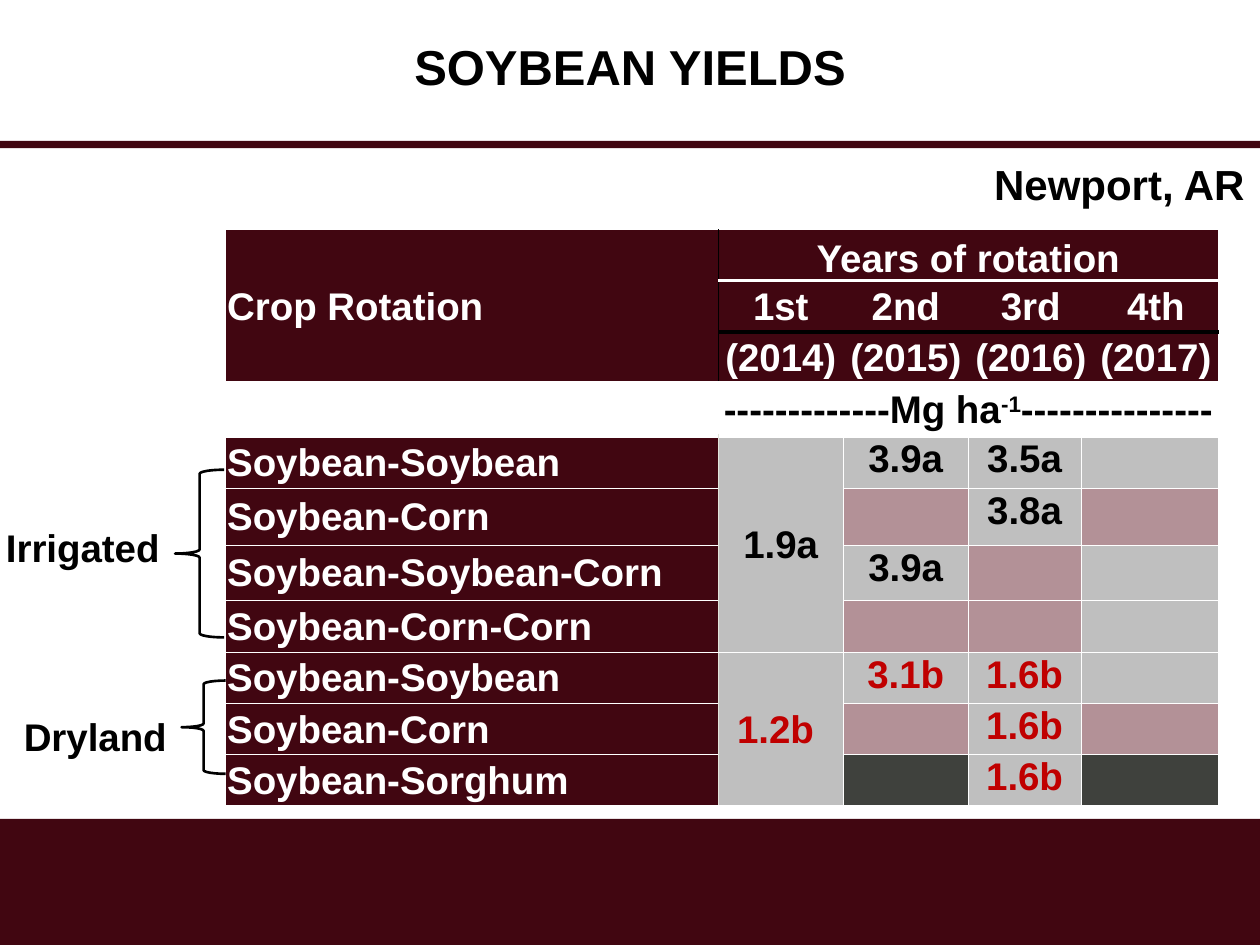
from dataclasses import dataclass
from typing import Optional

import pptx
import pptx.dml.color
import pptx.enum.shapes
import pptx.enum.text
import pptx.oxml
import pptx.oxml.ns
import pptx.util
from pptx.dml.color import RGBColor
from pptx.util import Cm

MAROON = RGBColor(0x41, 0x06, 0x11)
WHITE = RGBColor(0xFF, 0xFF, 0xFF)
BLACK = RGBColor(0, 0, 0)
RED = RGBColor(0xC0, 0, 0)
GRAY = RGBColor(0xBF, 0xBF, 0xBF)
ROSE = RGBColor(0xB3, 0x91, 0x97)
CHARCOAL = RGBColor(0x3F, 0x41, 0x3D)
PALE = RGBColor(0xE2, 0xE4, 0xDB)

ANCHOR = pptx.enum.text.MSO_ANCHOR
ALIGN = pptx.enum.text.PP_ALIGN
SHAPE = pptx.enum.shapes.MSO_SHAPE

COLUMN_WIDTHS = (9.93, 2.52, 2.52, 2.27, 0.25, 2.52)
ROW_HEIGHTS = (1.03, 1.03, 1.03, 1.07, 1.05, 1.15, 1.11, 1.05, 1.03, 1.03, 1.03)
HEADER_ROWS = 3
FIRST_CROP_ROW = 4
LAST_ROW = len(ROW_HEIGHTS) - 1
LAST_COLUMN = len(COLUMN_WIDTHS) - 1
NO_STYLE = "{2D5ABB26-0587-4C30-8999-92F81FD0307C}"


@dataclass
class Entry:
    row: int
    column: int
    texts: tuple = ()
    fill: Optional[RGBColor] = MAROON
    color: RGBColor = WHITE
    rows: int = 1
    columns: int = 1
    align: ALIGN = ALIGN.CENTER
    anchor: ANCHOR = ANCHOR.MIDDLE


@dataclass
class Crop:
    name: str
    second: str
    third: str
    fills: tuple


@dataclass
class System:
    label: str
    label_box: tuple
    brace_box: tuple
    first_yield: str
    color: RGBColor
    crops: tuple


SYSTEMS = (
    System("Irrigated", (-0.13, 10.44, 3.78, 1.19), (3.53, 9.47, 0.99, 3.38), "1.9a", BLACK, (
        Crop("Soybean-Soybean", "3.9a", "3.5a", (GRAY, GRAY, GRAY)),
        Crop("Soybean-Corn", "", "3.8a", (ROSE, GRAY, ROSE)),
        Crop("Soybean-Soybean-Corn", "3.9a", "", (GRAY, ROSE, GRAY)),
        Crop("Soybean-Corn-Corn", "", "", (ROSE, ROSE, GRAY)),
    )),
    System("Dryland", (0.23, 14.25, 3.43, 1.19), (3.66, 13.72, 0.89, 1.88), "1.2b ", RED, (
        Crop("Soybean-Soybean", "3.1b", "1.6b", (GRAY, GRAY, GRAY)),
        Crop("Soybean-Corn", "", "1.6b", (ROSE, GRAY, ROSE)),
        Crop("Soybean-Sorghum", "", "1.6b", (CHARCOAL, GRAY, CHARCOAL)),
    )),
)


def add_run(paragraph, text: str, size: float, color: RGBColor):
    run = paragraph.add_run()
    run.text = text
    run.font.name = "Arial"
    run.font.size = pptx.util.Pt(size)
    run.font.bold = True
    run.font.color.rgb = color
    return run


def add_bar(slide, top: float, height: float) -> None:
    shape = slide.shapes.add_shape(SHAPE.RECTANGLE, 0, Cm(top), Cm(25.4), Cm(height))
    shape.shadow.inherit = False
    shape.fill.solid()
    shape.fill.fore_color.rgb = MAROON
    shape.line.fill.background()


def add_label(slide, text: str, box: tuple, size: float, wrap: bool) -> None:
    shape = slide.shapes.add_textbox(*map(Cm, box))
    frame = shape.text_frame
    frame.word_wrap = wrap
    frame.auto_size = pptx.enum.text.MSO_AUTO_SIZE.SHAPE_TO_FIT_TEXT
    add_run(frame.paragraphs[0], text, size, BLACK)


def add_brace(slide, box: tuple) -> None:
    shape = slide.shapes.add_shape(SHAPE.LEFT_BRACE, *map(Cm, box))
    shape.shadow.inherit = False
    shape.fill.background()
    shape.line.color.rgb = BLACK
    shape.line.width = pptx.util.Pt(1.5)


def horizontal_border(edge: int) -> tuple:
    if edge in (0, LAST_ROW + 1):
        return WHITE, 0.75
    if edge == 2:
        return BLACK, 2.25
    return WHITE, 2.25 if edge <= FIRST_CROP_ROW else 0.25


def vertical_border(edge: int, row: int) -> Optional[tuple]:
    if edge in (0, LAST_COLUMN + 1):
        return WHITE, 0.75
    if row >= FIRST_CROP_ROW:
        return PALE if edge == 1 else WHITE, 0.25
    return (BLACK, 0.25) if edge == 1 and row < HEADER_ROWS else None


def set_border(cell, side: str, border: Optional[tuple]) -> None:
    properties = cell._tc.get_or_add_tcPr()
    line = pptx.oxml.parse_xml(f'<a:{side} {pptx.oxml.ns.nsdecls("a")}/>')
    if border:
        color, width = border
        line.set("w", str(pptx.util.Pt(width)))
        line.append(pptx.oxml.parse_xml(
            f'<a:solidFill {pptx.oxml.ns.nsdecls("a")}><a:srgbClr val="{color}"/></a:solidFill>'))
    else:
        line.append(pptx.oxml.parse_xml(f'<a:noFill {pptx.oxml.ns.nsdecls("a")}/>'))
    properties.append(line)


def fill_entry(table, entry: Entry) -> None:
    cell = table.cell(entry.row, entry.column)
    bottom, right = entry.row + entry.rows, entry.column + entry.columns
    if entry.rows * entry.columns > 1:
        cell.merge(table.cell(bottom - 1, right - 1))
    set_border(cell, "lnL", vertical_border(entry.column, entry.row))
    set_border(cell, "lnR", vertical_border(right, entry.row))
    set_border(cell, "lnT", horizontal_border(entry.row))
    set_border(cell, "lnB", horizontal_border(bottom))
    if entry.fill is None:
        cell.fill.background()
    else:
        cell.fill.solid()
        cell.fill.fore_color.rgb = entry.fill
    cell.margin_left = cell.margin_right = cell.margin_top = Cm(0.03)
    cell.margin_bottom = 0
    cell.vertical_anchor = entry.anchor
    paragraph = cell.text_frame.paragraphs[0]
    paragraph.alignment = entry.align
    for text in entry.texts:
        run = add_run(paragraph, text, 22, entry.color)
        if text == "-1":
            run._r.get_or_add_rPr().set("baseline", "30000")


def table_entries() -> list[Entry]:
    entries = [
        Entry(0, 0, ("Crop Rotation",), rows=HEADER_ROWS, align=ALIGN.LEFT),
        Entry(0, 1, ("Years of rotation",), columns=5, anchor=ANCHOR.BOTTOM),
        Entry(3, 0, fill=None),
        Entry(3, 1, ("-------------Mg ha", "-1", "---------------"), None, BLACK, columns=5),
    ]
    years = (("1st", 1, 1), ("2nd", 2, 1), ("3rd", 3, 2), ("4th", 5, 1))
    for year, (ordinal, column, span) in enumerate(years, 2014):
        entries.append(Entry(1, column, (ordinal,), columns=span))
        entries.append(Entry(2, column, (f"({year})",), columns=span))
    row = FIRST_CROP_ROW
    for system in SYSTEMS:
        entries.append(Entry(row, 1, (system.first_yield,), GRAY, system.color, len(system.crops)))
        for crop in system.crops:
            entries.append(Entry(row, 0, (crop.name,), align=ALIGN.LEFT))
            for column, (text, fill) in enumerate(zip((crop.second, crop.third, ""), crop.fills), 2):
                entries.append(Entry(row, column, (text,) if text else (), fill, system.color,
                                     columns=2 if column == 4 else 1, anchor=ANCHOR.TOP))
            row += 1
    return entries


def add_yield_table(slide) -> None:
    frame = slide.shapes.add_table(len(ROW_HEIGHTS), len(COLUMN_WIDTHS), Cm(4.55), Cm(4.63),
                                   Cm(sum(COLUMN_WIDTHS)), Cm(sum(ROW_HEIGHTS)))
    table = frame.table
    table.first_row = table.horz_banding = False
    table._tbl.tblPr.find(pptx.oxml.ns.qn("a:tableStyleId")).text = NO_STYLE
    for column, width in zip(table.columns, COLUMN_WIDTHS):
        column.width = Cm(width)
    for row, height in zip(table.rows, ROW_HEIGHTS):
        row.height = Cm(height)
    for entry in table_entries():
        fill_entry(table, entry)


def main() -> None:
    presentation = pptx.Presentation()
    presentation.slide_width, presentation.slide_height = Cm(25.4), Cm(19.05)
    slide = presentation.slides.add_slide(presentation.slide_layouts[5])
    add_bar(slide, 16.51, 2.54)
    title = slide.shapes.title
    title.left, title.top, title.width, title.height = 0, 0, Cm(25.4), Cm(2.82)
    title.text_frame.vertical_anchor = ANCHOR.MIDDLE
    paragraph = title.text_frame.paragraphs[0]
    paragraph.alignment = ALIGN.CENTER
    paragraph.line_spacing = 0.9
    add_run(paragraph, "SOYBEAN YIELDS", 28, BLACK)
    add_bar(slide, 2.84, 0.15)
    add_yield_table(slide)
    for system in SYSTEMS:
        add_brace(slide, system.brace_box)
        add_label(slide, system.label, system.label_box, 22, True)
    add_label(slide, "Newport, AR", (19.79, 3.07, 5.61, 1.27), 24, False)
    presentation.save("out.pptx")


if __name__ == "__main__":
    main()
